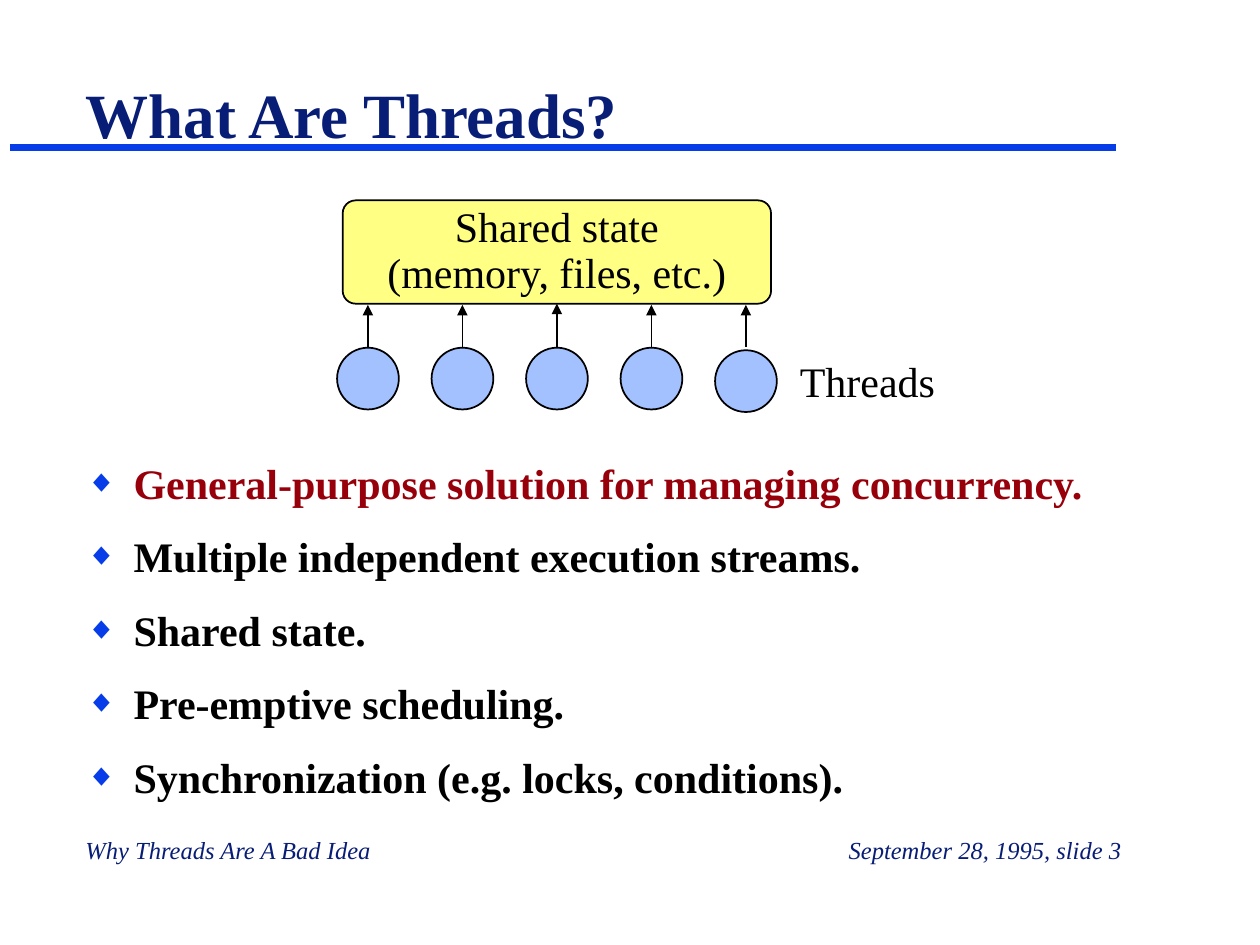
from typing import NamedTuple

from pptx import Presentation
from pptx.dml.color import RGBColor
from pptx.enum.shapes import MSO_CONNECTOR as CONN, MSO_SHAPE as SHAPE
from pptx.enum.text import MSO_ANCHOR as ANCHOR, MSO_AUTO_SIZE as AUTO, PP_ALIGN as ALIGN
from pptx.oxml.ns import qn
from pptx.util import Inches, Pt
from lxml.etree import SubElement

FONT = "Times New Roman"
NAVY, BLUE, RED, BLACK = "081D75", "063DE8", "97000A", "000000"
YELLOW, LIGHT_BLUE = "FFFF84", "A2C1FE"

BULLETS = [
    "General-purpose solution for managing concurrency.",
    "Multiple independent execution streams.",
    "Shared state.",
    "Pre-emptive scheduling.",
    "Synchronization (e.g. locks, conditions).",
]


class Label(NamedTuple):
    text: str
    left: float
    top: float
    width: float
    height: float
    size: float
    color: str = BLACK
    italic: bool = False
    align: ALIGN = ALIGN.LEFT
    before: float = 0


class Thread(NamedTuple):
    center: float
    top: float


LABELS = [
    Label("Why Threads Are A Bad Idea", 0.58, 6.58, 4.76, 0.33, 14, NAVY, True, before=1.5),
    Label("September 28, 1995, slide 3", 4.24, 6.58, 4.76, 0.33, 14, NAVY, True,
          ALIGN.RIGHT, 1.5),
    Label("Threads", 6.25, 2.77, 1.43, 0.5, 24, before=3),
]
# The last thread sits slightly lower than the others.
THREADS = [Thread(2.92 + 0.75 * i, 2.78 if i == 4 else 2.76) for i in range(5)]
DIAMETER = 0.49


def rgb(color: str) -> RGBColor:
    return RGBColor.from_string(color)


def place(s, left: float, top: float, width: float, height: float) -> None:
    s.left, s.top = Inches(left), Inches(top)
    s.width, s.height = Inches(width), Inches(height)


def format_runs(p, size: float, color: str, bold: bool = False, italic: bool = False) -> None:
    for r in p.runs:
        font = r.font
        font.name, font.size = FONT, Pt(size)
        font.bold, font.italic = bold, italic
        font.color.rgb = rgb(color)


def add_line(slide, start: tuple, end: tuple, color: str, width: float, arrow: bool = False):
    line = slide.shapes.add_connector(CONN.STRAIGHT, *map(Inches, start + end))
    line.line.color.rgb = rgb(color)
    line.line.width = Pt(width)
    if arrow:
        SubElement(line.line._get_or_add_ln(), qn("a:tailEnd"), type="triangle")
    SubElement(line._element.spPr, qn("a:effectLst"))
    return line


def add_shape(slide, kind: SHAPE, box: tuple, fill: str):
    s = slide.shapes.add_shape(kind, *map(Inches, box))
    s.shadow.inherit = False
    s.fill.solid()
    s.fill.fore_color.rgb = rgb(fill)
    s.line.color.rgb = rgb(BLACK)
    s.line.width = Pt(1)
    return s


def add_label(slide, label: Label) -> None:
    box = slide.shapes.add_textbox(*map(Inches, label[1:5]))
    tf = box.text_frame
    tf.word_wrap = True
    tf.text = label.text
    p = tf.paragraphs[0]
    p.alignment = label.align
    p.space_before = Pt(label.before)
    format_runs(p, label.size, label.color, italic=label.italic)


def set_bullet(p) -> None:
    """Give the paragraph a hanging blue diamond."""
    pPr = p._p.get_or_add_pPr()
    pPr.set("marL", str(Inches(0.38)))
    pPr.set("indent", str(-Inches(0.38)))
    SubElement(SubElement(pPr, qn("a:buClr")), qn("a:srgbClr"), val=BLUE)
    SubElement(pPr, qn("a:buSzPct"), val="75000")
    SubElement(pPr, qn("a:buFont"), typeface=FONT)
    SubElement(pPr, qn("a:buChar"), char="◆")


def fill_title(title) -> None:
    place(title, 0.58, 0.04, 8.33, 1.21)
    tf = title.text_frame
    tf.text = "What Are Threads?"
    tf.auto_size = AUTO.NONE
    tf.vertical_anchor = ANCHOR.BOTTOM
    p = tf.paragraphs[0]
    p.alignment = ALIGN.LEFT
    format_runs(p, 36, NAVY, bold=True)


def fill_body(body) -> None:
    place(body, 0.58, 3.58, 8.42, 2.83)
    tf = body.text_frame
    tf.text = "\n".join(BULLETS)
    tf.auto_size = AUTO.NONE
    for i, p in enumerate(tf.paragraphs):
        p.space_before = Pt(13.2 if i else 3)
        set_bullet(p)
        format_runs(p, 24, BLACK if i else RED, bold=True)


def add_shared_state(slide):
    box = add_shape(slide, SHAPE.ROUNDED_RECTANGLE, (2.72, 1.59, 3.4, 0.82), YELLOW)
    box.adjustments[0] = 0.125
    tf = box.text_frame
    tf.text = "Shared state\n(memory, files, etc.)"
    tf.word_wrap = False
    tf.vertical_anchor = ANCHOR.MIDDLE
    for p in tf.paragraphs:
        p.alignment = ALIGN.CENTER
        p.line_spacing = 0.9
        format_runs(p, 24, BLACK)
    return box


def main() -> None:
    prs = Presentation()
    prs.slide_width, prs.slide_height = Inches(10), Inches(7.5)
    slide = prs.slides.add_slide(prs.slide_layouts[1])

    add_line(slide, (0.08, 1.17), (8.86, 1.17), BLUE, 4)
    fill_title(slide.shapes.title)
    fill_body(slide.placeholders[1])
    for label in LABELS:
        add_label(slide, label)

    shared = add_shared_state(slide)
    for i, thread in enumerate(THREADS):
        left = thread.center - DIAMETER / 2
        add_shape(slide, SHAPE.OVAL, (left, thread.top, DIAMETER, DIAMETER), LIGHT_BLUE)
        arrow = add_line(slide, (thread.center, 2.75), (thread.center, 2.42), BLACK, 1, True)
        if i == len(THREADS) // 2:
            arrow.end_connect(shared, 2)

    prs.save("out.pptx")


if __name__ == "__main__":
    main()
